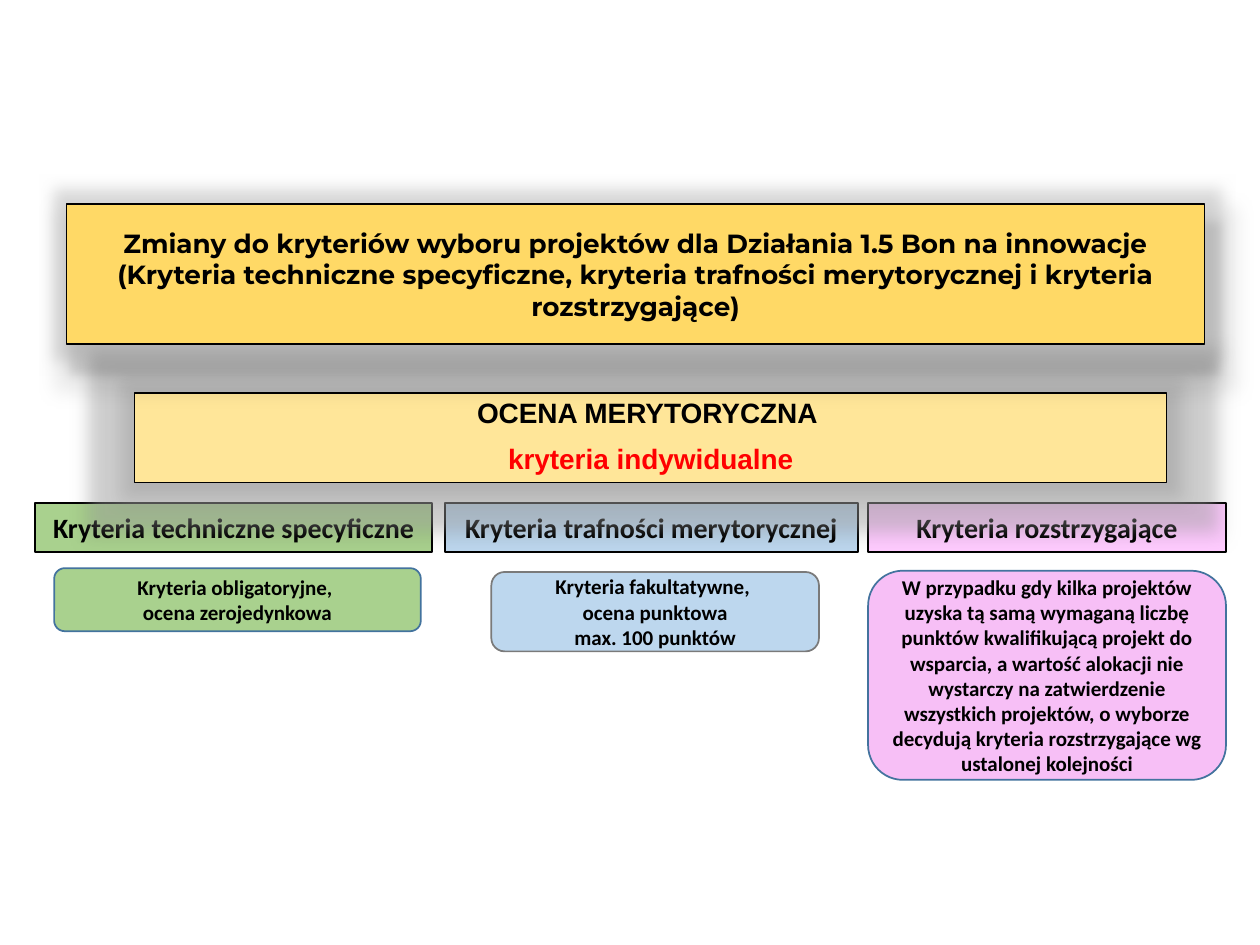
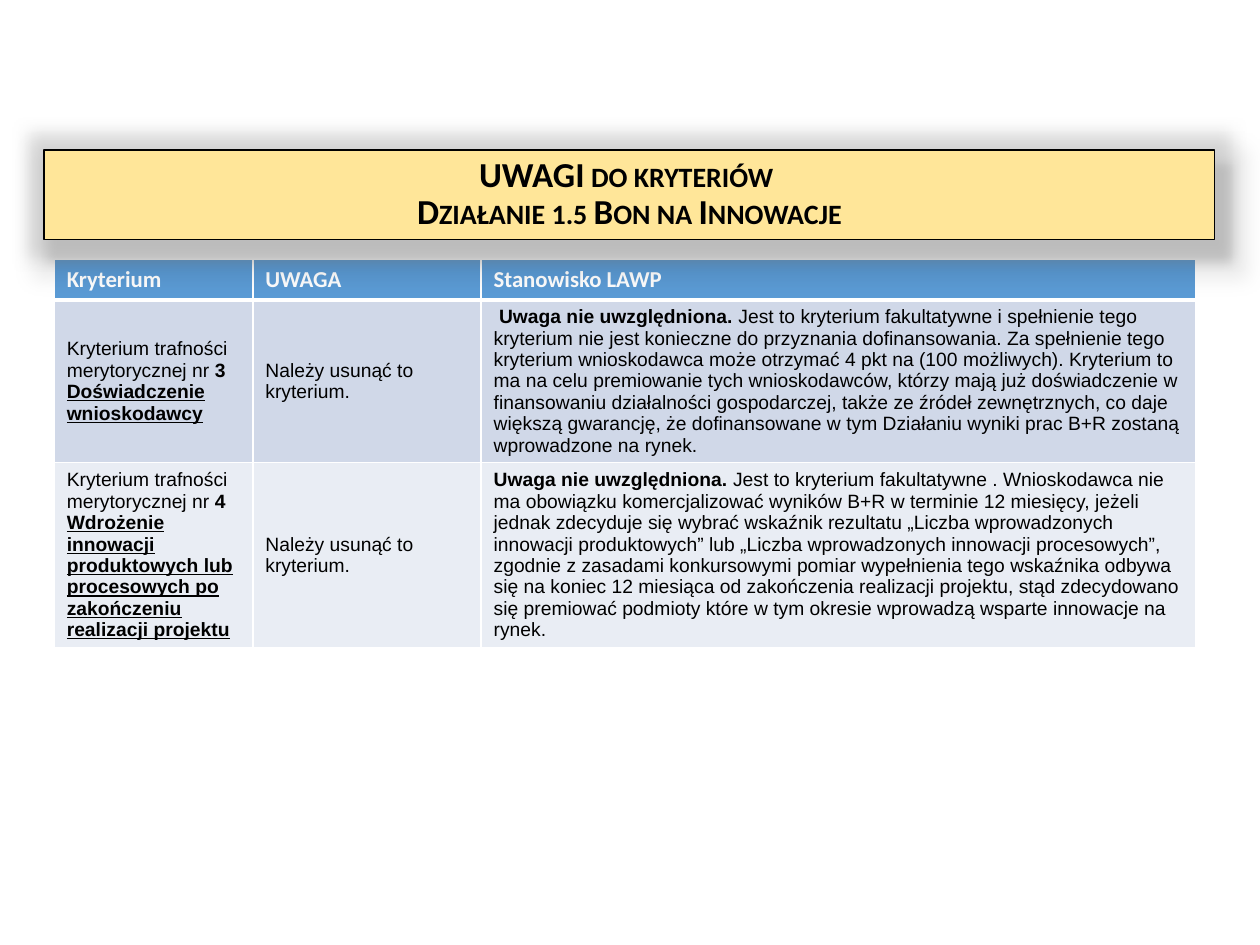
from lxml import etree
from pptx import Presentation, oxml, util as u
from pptx.dml.color import RGBColor
from pptx.enum import shapes, text
from pptx.oxml import ns

# Shared look
BLACK = RGBColor(0x00, 0x00, 0x00)
WHITE = RGBColor(0xFF, 0xFF, 0xFF)
RED = RGBColor(0xFF, 0x00, 0x00)
GOLD = RGBColor(0xFF, 0xD9, 0x66)
PALE_GOLD = RGBColor(0xFF, 0xE6, 0x99)
GREEN = RGBColor(0xA9, 0xD1, 0x8E)
LIGHT_BLUE = RGBColor(0xBD, 0xD7, 0xEE)
PINK = RGBColor(0xFF, 0xCC, 0xFF)
ORCHID = RGBColor(0xF7, 0xBF, 0xF6)
STEEL = RGBColor(0x43, 0x73, 0x9E)
GREY = RGBColor(0x7A, 0x7A, 0x7A)
HEADER_BLUE = RGBColor(0x5B, 0x9B, 0xD5)
ROW_FILLS = (RGBColor(0xD0, 0xD8, 0xE8), RGBColor(0xE9, 0xED, 0xF4))

WIDTH, HEIGHT = u.Inches(10), u.Inches(7.5)
COLUMNS, ROWS = 100, 75
TITLE_ONLY = 5

HALO = f"""<a:effectLst {ns.nsdecls('a')}>
  <a:glow rad="228600"><a:srgbClr val="A5A5A5"><a:alpha val="40000"/></a:srgbClr></a:glow>
  <a:outerShdw blurRad="76200" dist="19050" dir="2700000" sx="101000" sy="108000" algn="ctr">
    <a:srgbClr val="000000"><a:alpha val="20000"/></a:srgbClr></a:outerShdw>
</a:effectLst>"""


def grid(left, top, width, height):
    """Turn grid columns and rows into slide lengths."""
    column, row = WIDTH / COLUMNS, HEIGHT / ROWS
    return [round(n * unit) for n, unit in
            zip((left, top, width, height), (column, row, column, row))]


def add_run(paragraph, words, size, font, color=BLACK, bold=True,
            underline=False, small_caps=False):
    run = paragraph.add_run()
    run.text = words
    run.font.size = u.Pt(size)
    run.font.name = font
    run.font.bold = bold
    run.font.color.rgb = color
    if underline:
        run.font.underline = True
    if small_caps:
        run.font._element.set("cap", "small")


def write_lines(frame, lines, size, font, colors=(), spacing=1.0, gap=0,
                small_caps=False):
    """Write centred bold paragraphs, one for each line."""
    frame.word_wrap = True
    frame.auto_size = text.MSO_AUTO_SIZE.NONE
    frame.vertical_anchor = text.MSO_ANCHOR.MIDDLE
    for index, line in enumerate(lines):
        paragraph = frame.add_paragraph() if index else frame.paragraphs[0]
        paragraph.alignment = text.PP_ALIGN.CENTER
        paragraph.line_spacing = spacing
        paragraph.space_before = u.Pt(gap if index else 0)
        color = colors[index] if colors else BLACK
        add_run(paragraph, line, size, font, color, small_caps=small_caps)


def paint(shape, fill, line, line_width):
    shape.fill.solid()
    shape.fill.fore_color.rgb = fill
    shape.line.color.rgb = line
    shape.line.width = u.Pt(line_width)


def add_halo(shape):
    properties = shape.element.spPr
    for old in properties.findall(ns.qn("a:effectLst")):
        properties.remove(old)
    properties.append(oxml.parse_xml(HALO))


def add_box(slide, box, fill, line=BLACK, line_width=1, rounded=False):
    kind = shapes.MSO_SHAPE.ROUNDED_RECTANGLE if rounded else shapes.MSO_SHAPE.RECTANGLE
    shape = slide.shapes.add_shape(kind, *grid(*box))
    shape.shadow.inherit = False
    paint(shape, fill, line, line_width)
    return shape


def place_title(slide, box, fill, lines, size, font, **style):
    """Framed title whose halo lies over the content below."""
    title = slide.shapes.title
    title.left, title.top, title.width, title.height = grid(*box)
    paint(title, fill, BLACK, 0.75)
    add_halo(title)
    write_lines(title.text_frame, lines, size, font, **style)
    title.element.getparent().append(title.element)


def add_criteria_group(slide, box, heading, fill, note):
    """Heading bar with a rounded note set relative to the bar."""
    left, top, width, height = box
    bar = add_box(slide, box, fill)
    write_lines(bar.text_frame, [heading], 16, "Calibri")
    inset, drop, note_width, note_height, note_fill, note_line, lines = note
    card = add_box(slide, (left + inset, top + drop, note_width, note_height),
                   note_fill, note_line, rounded=True)
    write_lines(card.text_frame, lines, 12, "Calibri")


def build_criteria_slide(slide):
    # Three kinds of criteria: heading, left, width, fill, note
    groups = [
        ("Kryteria techniczne specyficzne", 2.8, 31.5, GREEN,
         (1.5, 5.2, 29.1, 5, GREEN, STEEL,
          ["Kryteria obligatoryjne, ", "ocena zerojedynkowa"])),
        ("Kryteria trafności merytorycznej", 35.3, 32.8, LIGHT_BLUE,
         (3.7, 5.5, 26, 6.3, LIGHT_BLUE, GREY,
          ["Kryteria fakultatywne, ", "ocena punktowa", "max. 100 punktów"])),
        ("Kryteria rozstrzygające", 68.9, 28.4, PINK,
         (0, 5.4, 28.4, 16.6, ORCHID, STEEL,
          ["W przypadku gdy kilka projektów uzyska tą samą wymaganą liczbę punktów "
           "kwalifikującą projekt do wsparcia, a wartość alokacji nie wystarczy na "
           "zatwierdzenie wszystkich projektów, o wyborze decydują kryteria "
           "rozstrzygające wg ustalonej kolejności"])),
    ]
    for heading, left, width, fill, note in groups:
        add_criteria_group(slide, (left, 39.9, width, 3.9), heading, fill, note)

    # Assessment band
    band = add_box(slide, (10.7, 31.2, 81.9, 7.1), PALE_GOLD, line_width=0.75)
    add_halo(band)
    write_lines(band.text_frame, ["OCENA MERYTORYCZNA ", "kryteria indywidualne"],
                16, "Arial", colors=(BLACK, RED), spacing=0.9, gap=9)

    place_title(slide, (5.3, 16.2, 90.3, 11.1), GOLD,
                ["Zmiany do kryteriów wyboru projektów dla Działania 1.5 Bon na innowacje "
                 "(Kryteria techniczne specyficzne, kryteria trafności merytorycznej "
                 "i kryteria rozstrzygające)"], 15, "Montserrat")


def style_cell(cell, fill, top_width, bottom_width):
    """White borders, then the fill."""
    properties = cell._tc.get_or_add_tcPr()
    for side, width in zip("LRTB", (1, 1, top_width, bottom_width)):
        border = etree.SubElement(properties, ns.qn(f"a:ln{side}"), w=str(u.Pt(width)))
        solid = etree.SubElement(border, ns.qn("a:solidFill"))
        etree.SubElement(solid, ns.qn("a:srgbClr"), val=str(WHITE))
    cell.fill.solid()
    cell.fill.fore_color.rgb = fill


def add_remarks_table(slide, box, header, remarks):
    table = slide.shapes.add_table(len(remarks) + 1, len(header), *grid(*box)).table
    for column, share in zip(table.columns, (0.174, 0.2, 0.626)):
        column.width = round(grid(*box)[2] * share)
    for row, share in zip(table.rows, (0.1, 0.42, 0.48)):
        row.height = round(grid(*box)[3] * share)

    # Header row
    for column, words in enumerate(header):
        cell = table.cell(0, column)
        style_cell(cell, HEADER_BLUE, 1, 3)
        add_run(cell.text_frame.paragraphs[0], words, 13, "Calibri", WHITE)

    # Remarks: each cell is a list of paragraphs, each paragraph a list of runs
    for row, remark in enumerate(remarks, 1):
        for column, paragraphs in enumerate(remark):
            cell = table.cell(row, column)
            style_cell(cell, ROW_FILLS[(row - 1) % 2], 3 if row == 1 else 1, 1)
            cell.vertical_anchor = text.MSO_ANCHOR.MIDDLE
            frame = cell.text_frame
            for index, runs in enumerate(paragraphs):
                paragraph = frame.add_paragraph() if index else frame.paragraphs[0]
                for words, bold, underline in runs:
                    add_run(paragraph, words, 11, "Arial", bold=bold, underline=underline)


def remark_row(number, name, lead, answer):
    criterion = [[("Kryterium trafności merytorycznej nr ", False, False),
                  (number, True, False)],
                 [(name, True, True)]]
    request = [[("Należy usunąć to kryterium.", False, False)]]
    return criterion, request, [[(lead, True, False), (answer, False, False)]]


def build_remarks_slide(slide):
    remarks = [
        remark_row(
            "3", "Doświadczenie wnioskodawcy", " Uwaga nie uwzględniona. ",
            "Jest to kryterium fakultatywne i spełnienie tego kryterium nie jest konieczne "
            "do przyznania dofinansowania. Za spełnienie tego kryterium wnioskodawca może "
            "otrzymać 4 pkt na (100 możliwych). Kryterium to ma na celu premiowanie tych "
            "wnioskodawców, którzy mają już doświadczenie w finansowaniu działalności "
            "gospodarczej, także ze źródeł zewnętrznych, co daje większą gwarancję, że "
            "dofinansowane w tym Działaniu wyniki prac B+R zostaną wprowadzone na rynek."),
        remark_row(
            "4", "Wdrożenie innowacji produktowych lub procesowych po zakończeniu "
            "realizacji projektu", "Uwaga nie uwzględniona. ",
            "Jest to kryterium fakultatywne . Wnioskodawca nie ma obowiązku "
            "komercjalizować wyników B+R w terminie 12 miesięcy, jeżeli jednak zdecyduje "
            "się wybrać wskaźnik rezultatu „Liczba wprowadzonych innowacji produktowych” "
            "lub „Liczba wprowadzonych innowacji procesowych”, zgodnie z zasadami "
            "konkursowymi pomiar wypełnienia tego wskaźnika odbywa się na koniec 12 "
            "miesiąca od zakończenia realizacji projektu, stąd zdecydowano się premiować "
            "podmioty które w tym okresie wprowadzą wsparte innowacje na rynek."),
    ]
    add_remarks_table(slide, (4.3, 20.6, 90.6, 30.6),
                      ["Kryterium", "UWAGA", "Stanowisko LAWP"], remarks)
    place_title(slide, (3.5, 11.9, 92.9, 7.1), PALE_GOLD,
                ["UWAGI do kryteriów ", "Działanie 1.5 Bon na Innowacje"],
                20, "Calibri", spacing=0.9, small_caps=True)


def main():
    presentation = Presentation()
    presentation.slide_width, presentation.slide_height = WIDTH, HEIGHT
    for build in (build_criteria_slide, build_remarks_slide):
        build(presentation.slides.add_slide(presentation.slide_layouts[TITLE_ONLY]))
    presentation.save("out.pptx")


if __name__ == "__main__":
    main()
